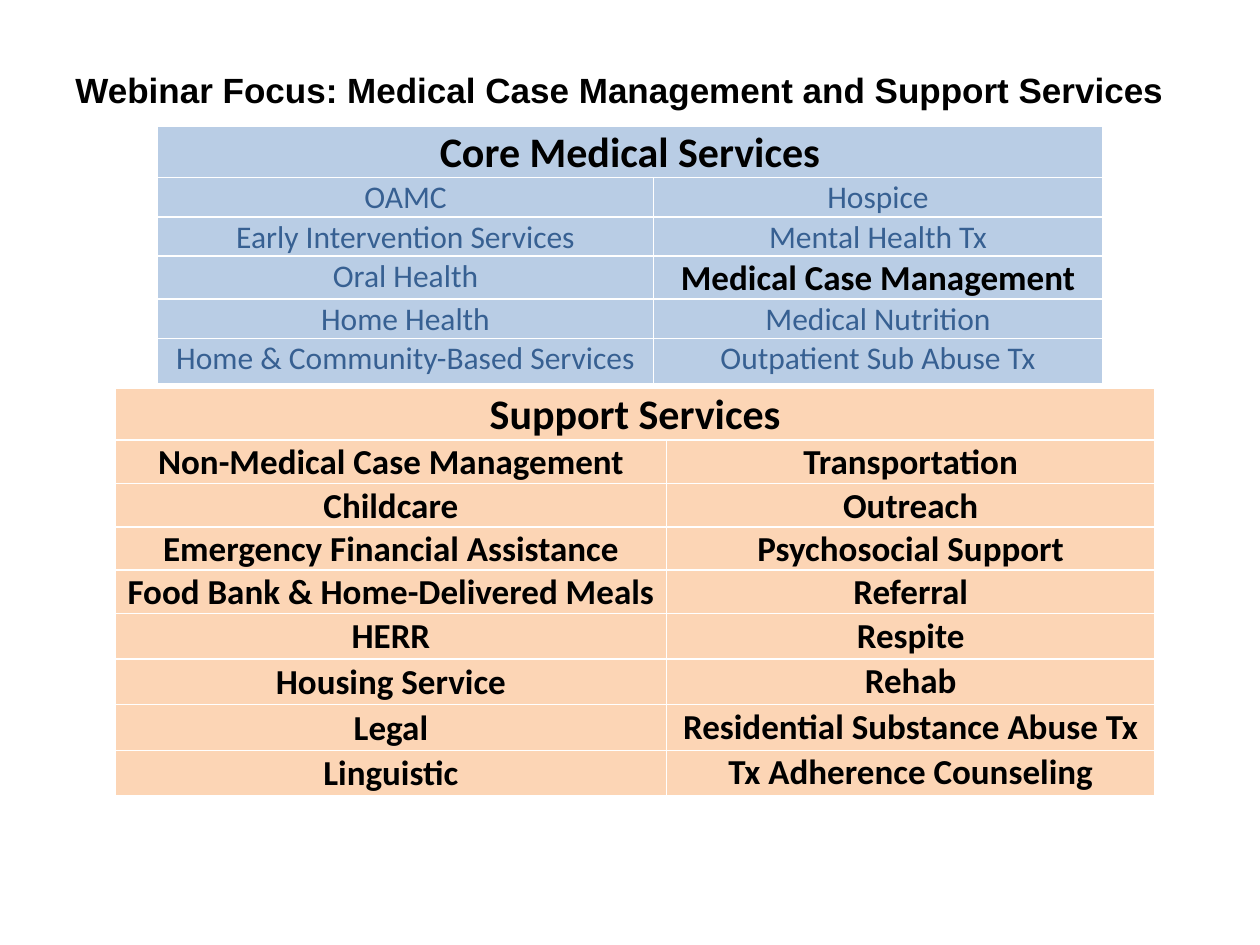
from lxml import etree
from pptx import Presentation
from pptx.dml.color import RGBColor
from pptx.enum.text import MSO_ANCHOR, PP_ALIGN
from pptx.oxml.ns import qn
from pptx.util import Inches, Pt

LEFT, CENTER = PP_ALIGN.LEFT, PP_ALIGN.CENTER
TOP, MIDDLE = MSO_ANCHOR.TOP, MSO_ANCHOR.MIDDLE
BLANK_LAYOUT = 6

BLACK, WHITE = "000000", "FFFFFF"
BLUE, MUTED_BLUE, PEACH = "B9CDE5", "376092", "FCD5B5"


def rgb(hex_string):
    return RGBColor.from_string(hex_string)


def grid(units):
    """The slide is a grid of 120 columns by 90 rows, twelve to the inch."""
    return Inches(units / 12)


def write(frame, text, font="Calibri", size=20, color=BLACK, bold=True, align=CENTER):
    paragraph = frame.paragraphs[0]
    paragraph.alignment = align
    run = paragraph.add_run()
    run.text = text
    run.font.name = font
    run.font.size = Pt(size)
    run.font.bold = bold
    run.font.color.rgb = rgb(color)


class ServiceSlide:
    """Holds the shared style and the slide being filled."""

    cell_inset = Inches(0.01)
    border_width = Pt(1)
    border_color = WHITE
    heading_size = 24

    def __init__(self, presentation):
        self.slide = presentation.slides.add_slide(presentation.slide_layouts[BLANK_LAYOUT])

    def title(self, text, left, top, width, height):
        box = self.slide.shapes.add_textbox(*map(grid, (left, top, width, height)))
        box.text_frame.word_wrap = True
        box.text_frame.vertical_anchor = MIDDLE
        write(box.text_frame, text, font="Arial", align=LEFT)

    def border(self, cell):
        properties = cell._tc.get_or_add_tcPr()
        for side in ("a:lnL", "a:lnR", "a:lnT", "a:lnB"):
            line = etree.SubElement(properties, qn(side), w=str(self.border_width))
            fill = etree.SubElement(line, qn("a:solidFill"))
            etree.SubElement(fill, qn("a:srgbClr"), val=self.border_color)

    def cell(self, cell, fill, anchor):
        self.border(cell)
        cell.fill.solid()
        cell.fill.fore_color.rgb = rgb(fill)
        cell.margin_left = cell.margin_right = cell.margin_top = self.cell_inset
        cell.margin_bottom = 0
        cell.vertical_anchor = anchor

    def service_table(self, heading, services, left, top, width, split, row_heights,
                      fill, anchors, muted=None, focus=()):
        """A heading over two columns; muted colours all services but the focus."""
        frame = self.slide.shapes.add_table(
            len(row_heights), 2, grid(left), grid(top), grid(width), grid(sum(row_heights)))
        table = frame.table
        table.first_row = table.horz_banding = False
        for column, share in zip(table.columns, (split, 1 - split)):
            column.width = grid(width * share)
        for row, height in zip(table.rows, row_heights):
            row.height = grid(height)

        # Heading across both columns
        for cell in table.rows[0].cells:
            self.cell(cell, fill, MIDDLE)
        table.cell(0, 0).merge(table.cell(0, 1))
        write(table.cell(0, 0).text_frame, heading, size=self.heading_size)

        # Service pairs
        for row, pair in enumerate(services, start=1):
            for column, service in enumerate(pair):
                cell = table.cell(row, column)
                self.cell(cell, fill, anchors[column])
                if muted and service not in focus:
                    write(cell.text_frame, service, size=18, color=muted, bold=False)
                else:
                    write(cell.text_frame, service)


CORE_SERVICES = [
    ("OAMC", "Hospice"),
    ("Early Intervention Services", "Mental Health Tx"),
    ("Oral Health", "Medical Case Management"),
    ("Home Health", "Medical Nutrition"),
    ("Home & Community-Based Services", "Outpatient Sub Abuse Tx"),
]
SUPPORT_SERVICES = [
    ("Non-Medical Case Management", "Transportation"),
    ("Childcare", "Outreach"),
    ("Emergency Financial Assistance", "Psychosocial Support"),
    ("Food Bank & Home-Delivered Meals", "Referral"),
    ("HERR", "Respite"),
    ("Housing Service", "Rehab"),
    ("Legal", "Residential Substance Abuse Tx"),
    ("Linguistic", "Tx Adherence Counseling"),
]


def main():
    presentation = Presentation()
    presentation.slide_width, presentation.slide_height = grid(120), grid(90)
    page = ServiceSlide(presentation)

    page.title("Webinar Focus: Medical Case Management and Support Services", 6, 5, 109, 7)

    # Core services: only the webinar's focus stands out
    page.service_table(
        "Core Medical Services", CORE_SERVICES, left=15, top=12, width=90, split=0.525,
        row_heights=[3.7, 3.7, 3.7, 4, 3.7, 4.35], fill=BLUE, anchors=(TOP, TOP),
        muted=MUTED_BLUE, focus=("Medical Case Management",))

    # Support services: all in focus
    page.service_table(
        "Support Services", SUPPORT_SERVICES, left=11, top=37, width=99, split=0.53,
        row_heights=[1.7, 3.6, 3.6, 4, 3.6] + [4.35] * 4, fill=PEACH, anchors=(MIDDLE, TOP))

    presentation.save("out.pptx")


if __name__ == "__main__":
    main()
